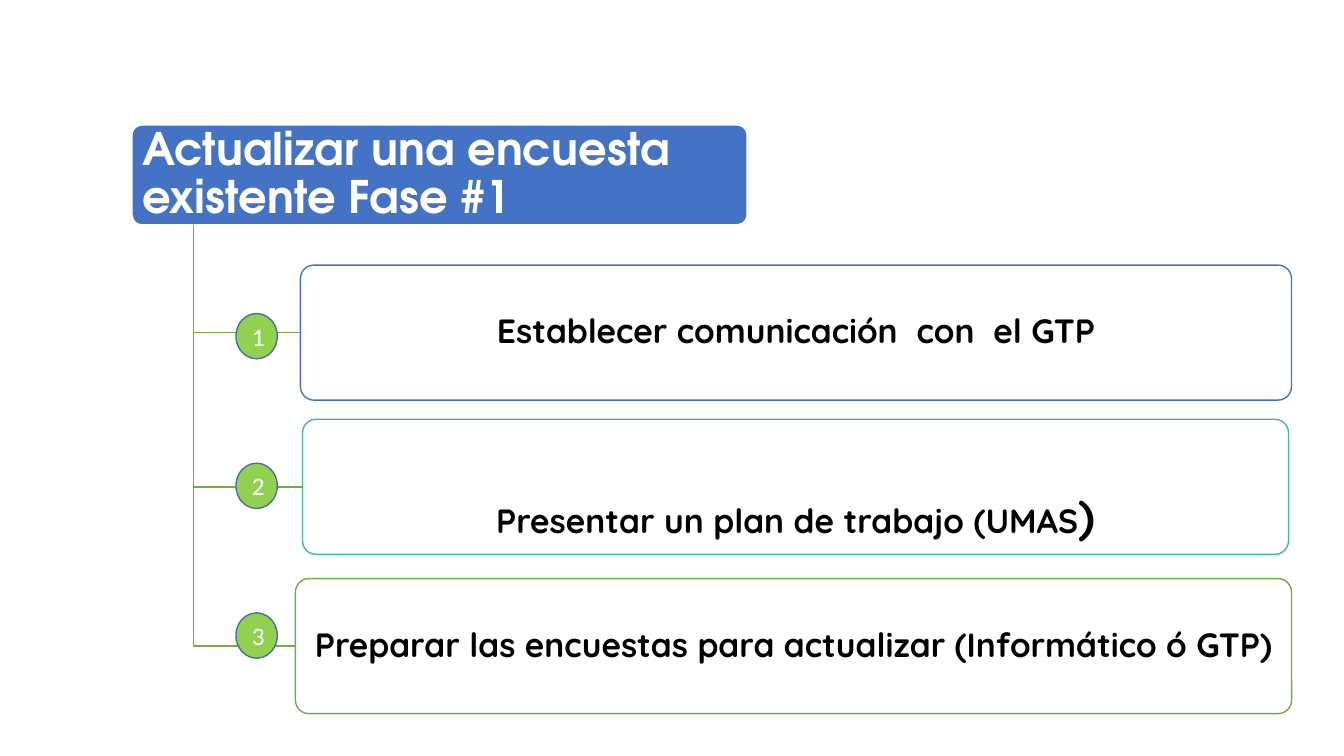
import pptx
import pptx.util
import pptx.dml.color
import pptx.enum.shapes
import pptx.enum.text
import pptx.oxml.ns
import lxml.etree

WIDTH, HEIGHT = 13.33, 7.5
TITLE = "Actualizar una encuesta existente Fase #1"
TITLE_FRAME = (1.31, 1.24, 6.1, 0.99)
STEPS = [
    {"left": 2.98, "top": 2.63, "width": 9.83, "line": "4472C4", "anchor": "MIDDLE",
     "spans": [("Establecer comunicación  con  el GTP", 24)]},
    {"left": 3.0, "top": 4.16, "width": 9.78, "line": "43BB8D", "anchor": "BOTTOM",
     "spans": [("Presentar un plan de trabajo (UMAS", 24), (")", 33)]},
    {"left": 2.93, "top": 5.74, "width": 9.88, "line": "70AD47", "anchor": "MIDDLE",
     "spans": [("Preparar las encuestas para actualizar (Informático ó GTP)", 24)]},
]
STEP_HEIGHT = 1.34
TRUNK_X = 1.92
BADGE_LEFT, BADGE_TOP, BADGE_PITCH = 2.34, 3.11, 1.485
BADGE_WIDTH, BADGE_HEIGHT = 0.41, 0.45

inch = pptx.util.Inches
SHAPES = pptx.enum.shapes.MSO_SHAPE
ANCHORS = pptx.enum.text.MSO_ANCHOR
ALIGN = pptx.enum.text.PP_ALIGN


def color(value):
    return pptx.dml.color.RGBColor.from_string(value)


def add_box(page, kind, frame, fill, line):
    box = page.shapes.add_shape(kind, *map(inch, frame))
    box.shadow.inherit = False
    box.fill.solid()
    box.fill.fore_color.rgb = color(fill)
    box.line.color.rgb = color(line)
    box.line.width = pptx.util.Pt(1)
    if kind == SHAPES.ROUNDED_RECTANGLE:
        box.adjustments[0] = 0.1
    return box


def set_transparency(box, opacity):
    qn = pptx.oxml.ns.qn
    shade = box._element.spPr.find(qn("a:solidFill")).find(qn("a:srgbClr"))
    lxml.etree.SubElement(shade, qn("a:alpha")).set("val", str(opacity * 1000))


def write(box, spans, font, ink, bold, align, anchor, margins, spacing):
    frame = box.text_frame
    frame.word_wrap = True
    frame.auto_size = pptx.enum.text.MSO_AUTO_SIZE.NONE
    frame.vertical_anchor = anchor
    frame.margin_left = frame.margin_right = inch(margins[0])
    frame.margin_top = frame.margin_bottom = inch(margins[1])
    para = frame.paragraphs[0]
    para.alignment = align
    para.line_spacing = spacing
    para.space_before = pptx.util.Pt(0)
    for text, size in spans:
        span = para.add_run()
        span.text = text
        span.font.name = font
        span.font.size = pptx.util.Pt(size)
        span.font.bold = bold
        span.font.color.rgb = color(ink)


def add_branch(page, end_x, end_y):
    start_y = TITLE_FRAME[1] + TITLE_FRAME[3]
    builder = page.shapes.build_freeform(inch(TRUNK_X), inch(start_y))
    builder.add_line_segments(
        [(inch(TRUNK_X), inch(end_y)), (inch(end_x), inch(end_y))], close=False)
    branch = builder.convert_to_shape()
    branch.shadow.inherit = False
    branch.fill.background()
    branch.line.color.rgb = color("70AD47")
    branch.line.width = pptx.util.Pt(1)


def main():
    deck = pptx.Presentation()
    deck.slide_width, deck.slide_height = inch(WIDTH), inch(HEIGHT)
    page = deck.slides.add_slide(deck.slide_layouts[5])

    add_box(page, SHAPES.ROUNDED_RECTANGLE, TITLE_FRAME, "4472C4", "FFFFFF")
    title = page.shapes.title
    page.shapes._spTree.append(title._element)
    left, top, width, height = TITLE_FRAME
    inset = 0.03
    title.left, title.top = inch(left + inset), inch(top + inset)
    title.width, title.height = inch(width - 2 * inset), inch(height - 2 * inset)
    write(title, [(TITLE, 32)], "TeX Gyre Adventor", "FFFFFF", True,
          ALIGN.LEFT, ANCHORS.MIDDLE, (0.07, 0.04), 0.9)

    for step in STEPS:
        add_branch(page, step["left"], step["top"] + STEP_HEIGHT / 2)
        box = add_box(page, SHAPES.ROUNDED_RECTANGLE,
                      (step["left"], step["top"], step["width"], STEP_HEIGHT),
                      "FFFFFF", step["line"])
        set_transparency(box, 90)
        write(box, step["spans"], "Quicksand", "000000", True, ALIGN.CENTER,
              ANCHORS[step["anchor"]], (0.09, 0.07), 0.9)

    for index in range(len(STEPS)):
        frame = (BADGE_LEFT, BADGE_TOP + index * BADGE_PITCH, BADGE_WIDTH, BADGE_HEIGHT)
        badge = add_box(page, SHAPES.OVAL, frame, "92D050", "43739E")
        write(badge, [(str(index + 1), 18)], "Calibri", "FFFFFF", False,
              ALIGN.CENTER, ANCHORS.MIDDLE, (0.1, 0.05), 1.0)

    deck.save("out.pptx")


if __name__ == "__main__":
    main()
